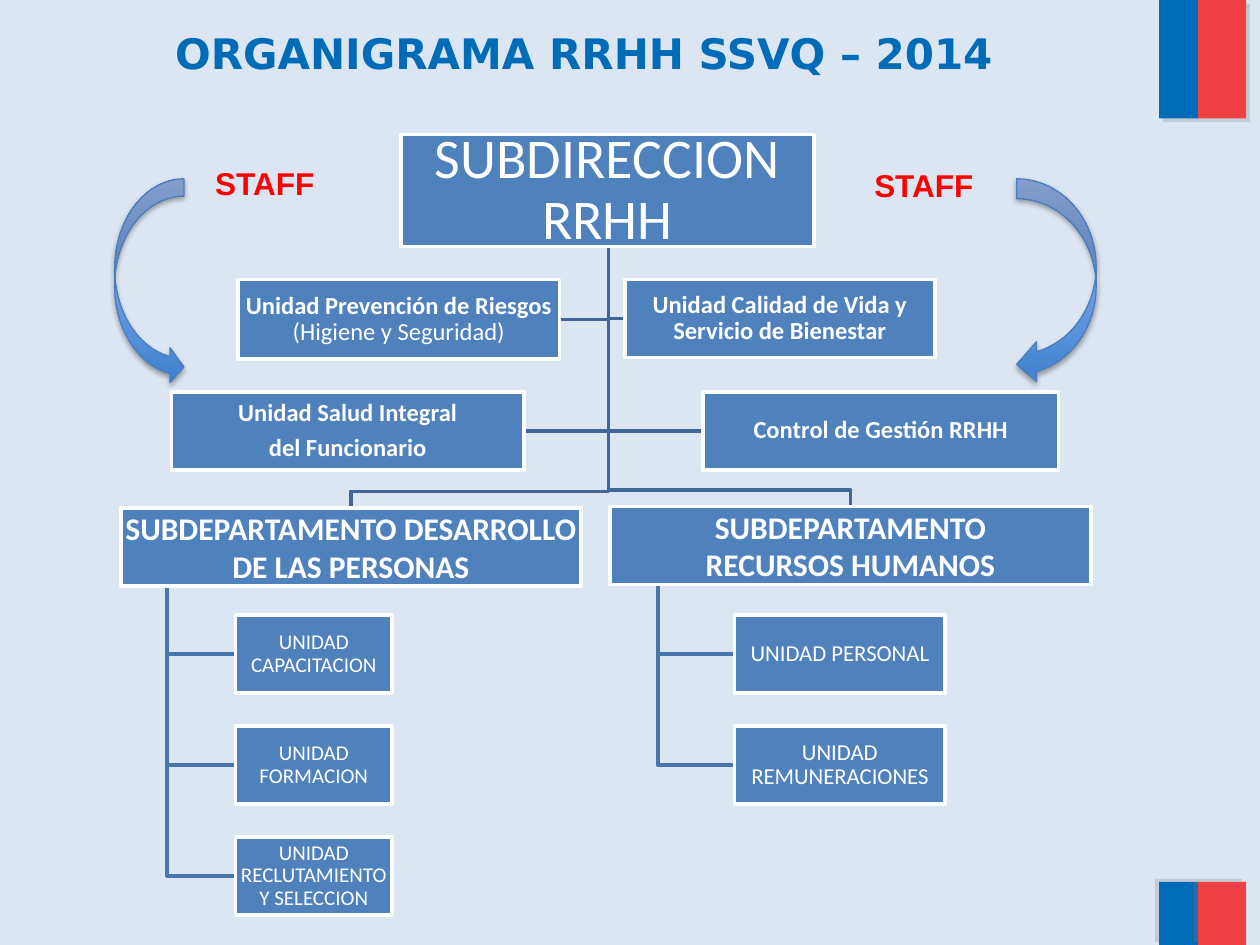
from dataclasses import dataclass

from lxml import etree
from pptx import Presentation
from pptx.dml.color import RGBColor
from pptx.enum import shapes as sh, text as tx
from pptx.oxml import ns
from pptx.util import Pt

BOX_FILL, STAFF_LINE, UNIT_LINE = "4F81BD", "3F6797", "4875AC"
BLUE, RED, WHITE = "006CB7", "EF4144", "FFFFFF"
BOX_H = 44.6
UNIT_TOP, UNIT_PITCH = 351.4, 63.4


@dataclass
class Box:
    """One unit of the chart; each line is a list of (text, bold) runs."""
    x: float
    y: float
    w: float
    lines: list
    size: float = 14
    h: float = BOX_H
    tight: bool = True
    inset: float = 0.7

    @property
    def center(self) -> float:
        return self.x + self.w / 2

    @property
    def middle(self) -> float:
        return self.y + self.h / 2


def color(value: str) -> RGBColor:
    return RGBColor.from_string(value)


def write(frame, lines, *, font: str, size: float, fill: str,
          align=tx.PP_ALIGN.CENTER, anchor=tx.MSO_ANCHOR.MIDDLE,
          inset: float | None = None, tight=False) -> None:
    frame.word_wrap = True
    frame.auto_size = tx.MSO_AUTO_SIZE.NONE
    frame.vertical_anchor = anchor
    if inset is not None:
        frame.margin_left = frame.margin_right = Pt(inset)
        frame.margin_top = frame.margin_bottom = Pt(inset)
    for i, runs in enumerate(lines):
        par = frame.paragraphs[0] if i == 0 else frame.add_paragraph()
        par.alignment = align
        par.space_before = Pt(0)
        if tight:
            par.line_spacing = 0.9
            par.space_after = Pt(0.35 * size)
        for words, bold in runs:
            run = par.add_run()
            run.text = words
            run.font.name, run.font.size, run.font.bold = font, Pt(size), bold
            run.font.color.rgb = color(fill)


def add_shadow(shape, tone: str, alpha: int, blur: float, dist: float, angle: int) -> None:
    shape.shadow.inherit = False
    effects = shape._element.spPr.find(ns.qn("a:effectLst"))
    outer = etree.SubElement(effects, ns.qn("a:outerShdw"), blurRad=str(Pt(blur)),
                             dist=str(Pt(dist)), dir=str(angle * 60000),
                             algn="ctr", rotWithShape="0")
    rgb = etree.SubElement(outer, ns.qn("a:srgbClr"), val=tone)
    etree.SubElement(rgb, ns.qn("a:alpha"), val=str(alpha * 1000))


def add_preset(slide, kind, x: float, y: float, w: float, h: float):
    shape = slide.shapes.add_shape(kind, Pt(x), Pt(y), Pt(w), Pt(h))
    shape.shadow.inherit = False
    return shape


def draw_bar(slide, x: float, y: float, w: float, h: float, fill: str, angle: int) -> None:
    bar = add_preset(slide, sh.MSO_SHAPE.RECTANGLE, x, y, w, h)
    bar.fill.solid()
    bar.fill.fore_color.rgb = color(fill)
    bar.line.fill.background()
    add_shadow(bar, "808080", 25, 0, 3, angle)


def draw_box(slide, box: Box) -> None:
    shape = add_preset(slide, sh.MSO_SHAPE.RECTANGLE, box.x, box.y, box.w, box.h)
    shape.fill.solid()
    shape.fill.fore_color.rgb = color(BOX_FILL)
    shape.line.color.rgb = color(WHITE)
    shape.line.width = Pt(2)
    write(shape.text_frame, box.lines, font="Calibri", size=box.size, fill=WHITE,
          inset=box.inset, tight=box.tight)


def draw_path(slide, points: list, line: str) -> None:
    corners = [(Pt(x), Pt(y)) for x, y in points]
    builder = slide.shapes.build_freeform(*corners[0])
    builder.add_line_segments(corners[1:], close=False)
    path = builder.convert_to_shape()
    path.shadow.inherit = False
    path.fill.background()
    path.line.color.rgb = color(line)
    path.line.width = Pt(2)


def draw_side_link(slide, x: float, top: float, box: Box, line: str) -> None:
    """Down from (x, top), then sideways to the nearer edge of the box."""
    edge = box.x if box.x > x else box.x + box.w
    draw_path(slide, [(x, top), (x, box.middle), (edge, box.middle)], line)


def draw_staff(slide, kind, arrow: tuple, label: tuple, adjustments: tuple) -> None:
    shape = add_preset(slide, kind, *arrow)
    for i, value in enumerate(adjustments):
        shape.adjustments[i] = value
    shape.fill.gradient()
    shape.fill.gradient_angle = 90
    for stop, tone, place in zip(shape.fill.gradient_stops, ("3F80CE", "A4C4FF"), (0, 1)):
        stop.color.rgb = color(tone)
        stop.position = place
    shape.line.color.rgb = color("4B7EBC")
    shape.line.width = Pt(0.75)
    add_shadow(shape, "000000", 35, 3.1, 1.8, 90)
    caption = slide.shapes.add_textbox(*map(Pt, label))
    write(caption.text_frame, [[("STAFF", True)]], font="Arial", size=18, fill="FF0000",
          align=tx.PP_ALIGN.LEFT, anchor=tx.MSO_ANCHOR.TOP)


def unit_column(x: float, w: float, size: float, names: list) -> list[Box]:
    return [Box(x, UNIT_TOP + i * UNIT_PITCH, w, [[(name, False)]], size)
            for i, name in enumerate(names)]


def main() -> None:
    deck = Presentation()
    deck.slide_width, deck.slide_height = Pt(720), Pt(540)
    slide = deck.slides.add_slide(deck.slide_layouts[5])
    slide.background.fill.solid()
    slide.background.fill.fore_color.rgb = color("DCE6F2")

    # Flag bars at the right corners
    for y, h, angle in ((0, 67.7, 45), (504, 36, 215)):
        draw_bar(slide, 662.4, y, 22.3, h, BLUE, angle)
        draw_bar(slide, 684.7, y, 27.4, h, RED, angle)

    # Title
    title = slide.shapes.title
    title.left, title.top, title.width, title.height = map(Pt, (12.2, 12.2, 643, 90))
    write(title.text_frame, [[("ORGANIGRAMA RRHH SSVQ – 2014", True)]],
          font="DejaVu Sans", size=24, fill=BLUE, anchor=tx.MSO_ANCHOR.TOP)

    # Units of the organisation
    head = Box(229, 77, 236.2, [[("SUBDIRECCION RRHH", False)]], 32, h=64, inset=1.4)
    staff_units = [
        Box(136.1, 159.8, 183.6, [[("Unidad Prevención de Riesgos", True),
                                   (" (Higiene y Seguridad)", False)]], h=45.4),
        Box(357.1, 159.8, 177.1, [[("Unidad Calidad de Vida y Servicio de Bienestar", True)]]),
        Box(97.9, 223.9, 201.6, [[("Unidad Salud Integral", True)],
                                 [("del Funcionario", True)]]),
        Box(401.8, 223.9, 203, [[("Control de Gestión RRHH", True)]]),
    ]
    people = Box(69.1, 290.2, 262.8, [[("SUBDEPARTAMENTO DESARROLLO", True)],
                                      [("DE LAS PERSONAS", True)]], 18, tight=False)
    resources = Box(348.5, 289.4, 275, [[("SUBDEPARTAMENTO", True)],
                                        [("RECURSOS HUMANOS", True)]], 18, tight=False)
    branches = [
        (people, unit_column(134.7, 89.3, 12, ["UNIDAD CAPACITACION", "UNIDAD FORMACION",
                                               "UNIDAD RECLUTAMIENTO Y SELECCION"])),
        (resources, unit_column(419.8, 120.2, 13, ["UNIDAD PERSONAL",
                                                   "UNIDAD REMUNERACIONES"])),
    ]

    # Links, behind the boxes
    trunk, head_bottom = head.center + 0.6, head.y + head.h
    for unit in staff_units:
        draw_side_link(slide, trunk, head_bottom, unit, STAFF_LINE)
    for parent, units in branches:
        bend = parent.y - 9.4
        draw_path(slide, [(trunk, head_bottom), (trunk, bend), (parent.center, bend),
                          (parent.center, parent.y)], STAFF_LINE)
        for unit in units:
            draw_side_link(slide, parent.x + parent.w / 10, parent.y + parent.h,
                           unit, UNIT_LINE)

    # Boxes
    for box in [head, *staff_units]:
        draw_box(slide, box)
    for parent, units in branches:
        for box in [parent, *units]:
            draw_box(slide, box)

    # Staff arrows and their labels
    draw_staff(slide, sh.MSO_SHAPE.CURVED_RIGHT_ARROW, (65.5, 102.2, 39.6, 117.4),
               (115.9, 90, 73.4, 28.8), (0.25, 0.5, 0.2))
    draw_staff(slide, sh.MSO_SHAPE.CURVED_LEFT_ARROW, (581, 102.2, 45.4, 117.4),
               (492.5, 91.4, 73.4, 28.8), (0.25, 0.5, 0.25))

    deck.save("out.pptx")


if __name__ == "__main__":
    main()
